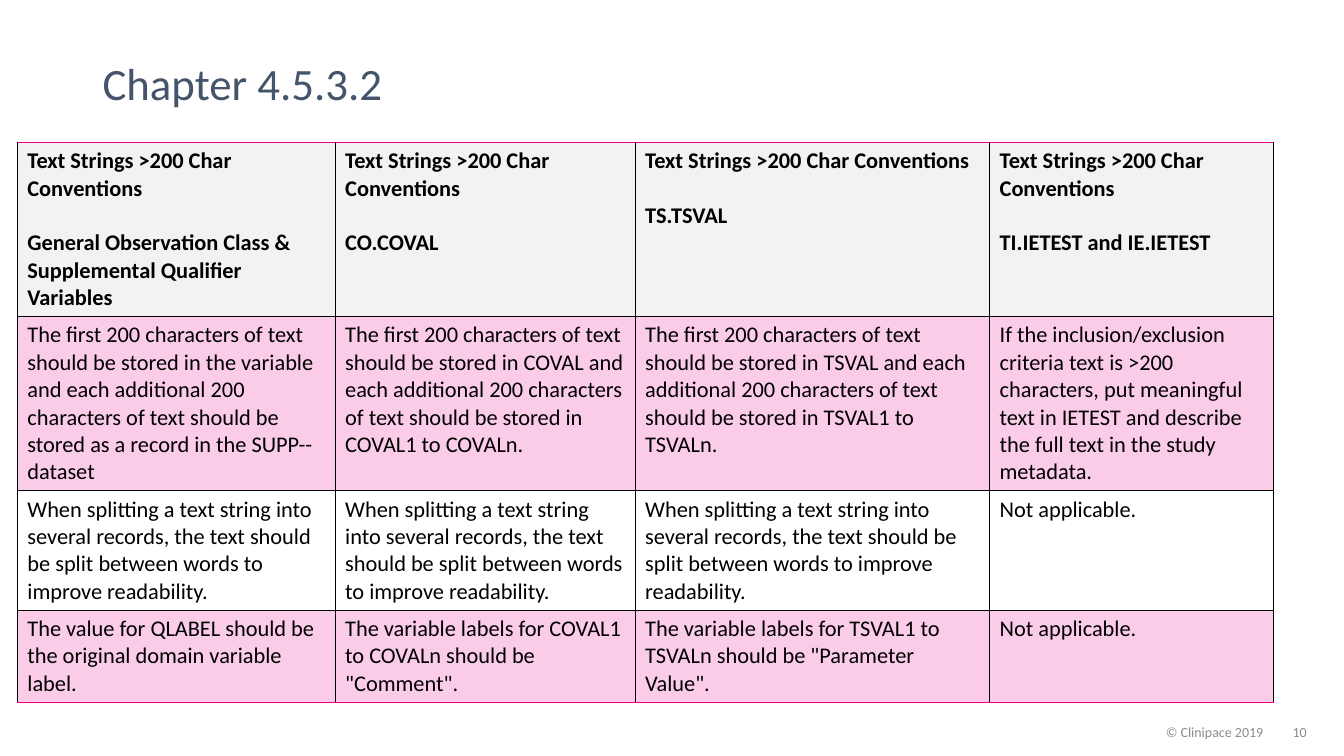
"""Build the Chapter 4.5.3.2 slide comparing long text string conventions."""
from lxml import etree
from pptx import Presentation
from pptx.dml import color
from pptx.enum import text
from pptx.oxml import ns
from pptx.util import Pt

TITLE = "Chapter 4.5.3.2"
COPYRIGHT = "© Clinipace 2019"
PAGE = "10"
CONVENTION = "Text Strings >200 Char Conventions"
SPLITTING = ("When splitting a text string into several records, the text should be "
             "split between words to improve readability.")
NOT_APPLICABLE = "Not applicable."
SUBJECTS = ["General Observation Class & Supplemental Qualifier Variables",
            "CO.COVAL", "TS.TSVAL", "TI.IETEST and IE.IETEST"]
RULES = [
    ["The first 200 characters of text should be stored in the variable and each additional "
     "200 characters of text should be stored as a record in the SUPP-- dataset",
     "The first 200 characters of text should be stored in COVAL and each additional "
     "200 characters of text should be stored in COVAL1 to COVALn.",
     "The first 200 characters of text should be stored in TSVAL and each additional "
     "200 characters of text should be stored in TSVAL1 to TSVALn.",
     "If the inclusion/exclusion criteria text is >200 characters, put meaningful text "
     "in IETEST and describe the full text in the study metadata."],
    [SPLITTING, SPLITTING, SPLITTING, NOT_APPLICABLE],
    ["The value for QLABEL should be the original domain variable label.",
     "The variable labels for COVAL1 to COVALn should be \"Comment\".",
     "The variable labels for TSVAL1 to TSVALn should be \"Parameter Value\".",
     NOT_APPLICABLE],
]

THEME = {
    "font": "Calibri", "title": "44546A", "footer": "8C8C8C", "ink": "000000",
    "accent": "EC008C", "header": "F2F2F2", "band_alpha": 20,
    "title_size": 32, "cell_size": 16, "footer_size": 10,
}
COLUMN_WIDTHS = [227, 214.3, 253.2, 202.6]
ROW_HEIGHTS = [124.4, 124.4, 85.4, 65.8]
TABLE_LEFT, TABLE_TOP = 12.4, 101.7
HEADER_GAP = 19.5
FOOTER_TOP, FOOTER_HEIGHT = 508.3, 28.8


def style(paragraph, size, ink, bold=False):
    for run in paragraph.runs:
        run.font.name = THEME["font"]
        run.font.size = Pt(size)
        run.font.bold = bold
        run.font.color.rgb = color.RGBColor.from_string(ink)


def add_label(slide, words, box, size, ink, align=text.PP_ALIGN.LEFT):
    frame = slide.shapes.add_textbox(*map(Pt, box)).text_frame
    frame.word_wrap = True
    frame.vertical_anchor = text.MSO_ANCHOR.MIDDLE
    frame.text = words
    paragraph = frame.paragraphs[0]
    paragraph.alignment = align
    style(paragraph, size, ink)
    return paragraph


def add_border(cell, side, ink):
    properties = cell._tc.get_or_add_tcPr()
    line = etree.SubElement(properties, ns.qn("a:ln" + side), w=str(Pt(1)))
    fill = etree.SubElement(line, ns.qn("a:solidFill"))
    etree.SubElement(fill, ns.qn("a:srgbClr"), val=ink)


def fill_cell(cell, row):
    if row == 2:
        cell.fill.background()
        return
    cell.fill.solid()
    ink = THEME["accent"] if row else THEME["header"]
    cell.fill.fore_color.rgb = color.RGBColor.from_string(ink)
    if row:
        shade = cell._tc.tcPr.find(ns.qn("a:solidFill")).find(ns.qn("a:srgbClr"))
        etree.SubElement(shade, ns.qn("a:alpha"), val=str(THEME["band_alpha"] * 1000))


def add_conventions(slide):
    rows = [[f"{CONVENTION}\n{subject}" for subject in SUBJECTS]] + RULES
    table = slide.shapes.add_table(
        len(rows), len(SUBJECTS), Pt(TABLE_LEFT), Pt(TABLE_TOP),
        Pt(sum(COLUMN_WIDTHS)), Pt(sum(ROW_HEIGHTS))).table
    table.first_row = table.horz_banding = False
    for column, width in zip(table.columns, COLUMN_WIDTHS):
        column.width = Pt(width)
    for index, (row, height) in enumerate(zip(table.rows, ROW_HEIGHTS)):
        row.height = Pt(height)
        top = THEME["ink"] if index else THEME["accent"]
        bottom = THEME["accent"] if index == len(rows) - 1 else THEME["ink"]
        for cell, words in zip(row.cells, rows[index]):
            cell.text_frame.text = words
            for paragraph in cell.text_frame.paragraphs:
                style(paragraph, THEME["cell_size"], THEME["ink"], index == 0)
            for paragraph in cell.text_frame.paragraphs[1:]:
                paragraph.space_before = Pt(HEADER_GAP)
            for side, ink in zip("LRTB", (THEME["ink"], THEME["ink"], top, bottom)):
                add_border(cell, side, ink)
            fill_cell(cell, index)


def main():
    presentation = Presentation()
    presentation.slide_width, presentation.slide_height = Pt(960), Pt(540)
    slide = presentation.slides.add_slide(presentation.slide_layouts[6])
    title = add_label(slide, TITLE, (66.2, 34.6, 708.5, 54),
                      THEME["title_size"], THEME["title"])
    title.line_spacing = 0.9
    for words, left, width in ((COPYRIGHT, 585.4, 324), (PAGE, 909.4, 31)):
        add_label(slide, words, (left, FOOTER_TOP, width, FOOTER_HEIGHT),
                  THEME["footer_size"], THEME["footer"], text.PP_ALIGN.RIGHT)
    add_conventions(slide)
    presentation.save("out.pptx")


if __name__ == "__main__":
    main()
